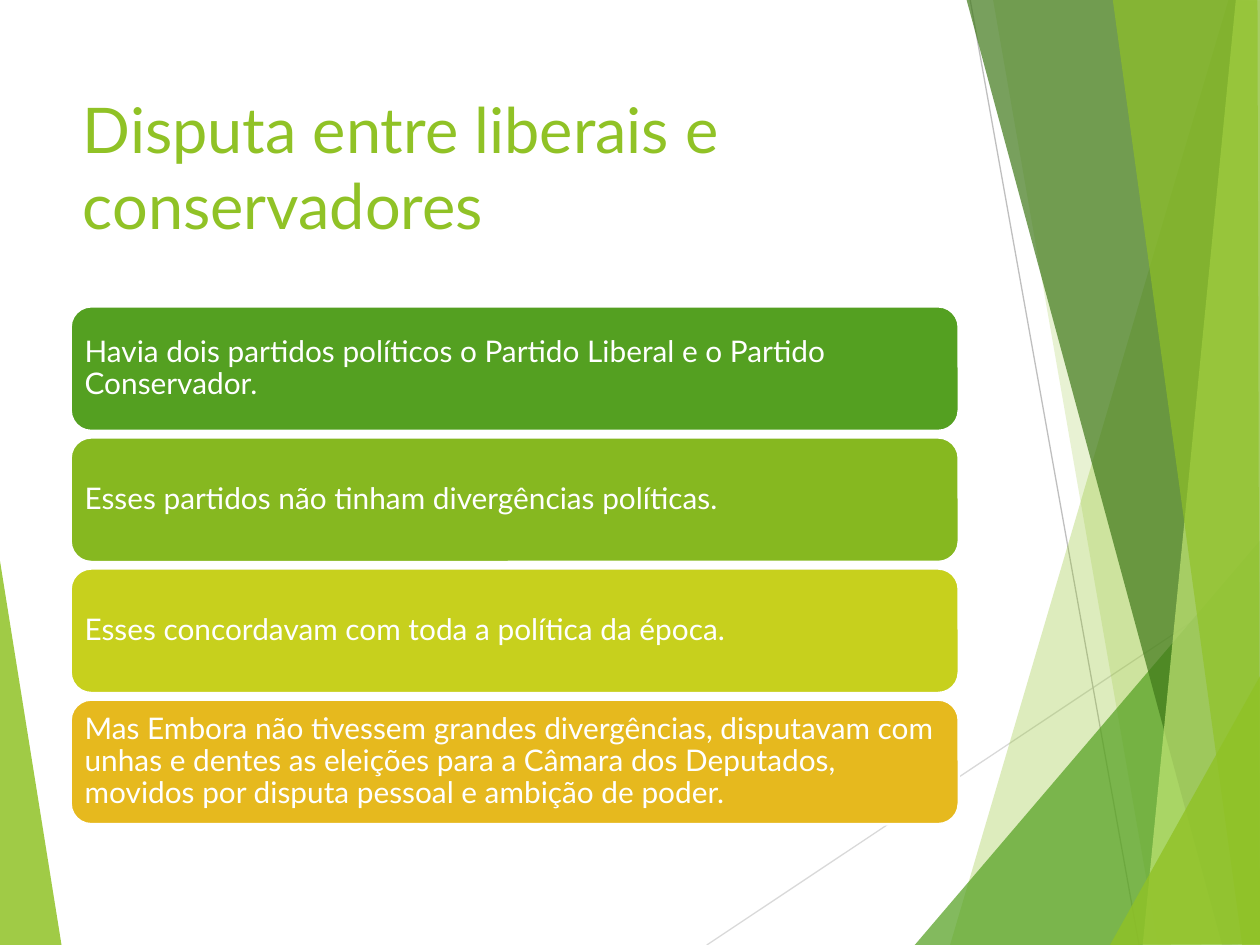
import pptx
import pptx.dml.color
import pptx.enum.shapes
import pptx.enum.text
import pptx.oxml.ns
import pptx.util
from dataclasses import dataclass
from lxml import etree

Pt = pptx.util.Pt
qn = pptx.oxml.ns.qn


@dataclass(frozen=True)
class Theme:
    font: str = "Lato"
    title_size: float = 36
    body_size: float = 17
    lime: str = "90C226"
    green: str = "54A021"
    dark_green: str = "3F7819"
    pale_lime: str = "C0E474"
    white: str = "FFFFFF"
    light_gray: str = "D9D9D9"
    gray: str = "BFBFBF"
    cards: tuple = ("54A021", "86B820", "C7D01D", "E6B91E")


THEME = Theme()

# Corner points, fill colour, opacity in percent
FACETS = [
    ([(-0.7, 316), (35.3, 540.7), (-0.7, 540)], THEME.lime, 85),
    ([(702, 0), (542.9, 540), (721.4, 540.7), (720.7, 0.7)], THEME.lime, 30),
    ([(567.4, -0.7), (661.7, 540), (720.7, 540), (720.7, -0.7)], THEME.lime, 20),
    ([(522.7, 540), (720, 308.9), (720.7, 540)], THEME.green, 72),
    ([(552.2, -0.7), (698.4, 540), (720.7, 539.3), (720.7, -0.7)], THEME.dark_green, 70),
    ([(706.3, -0.7), (653, 540), (720.7, 540), (720, -0.7)], THEME.pale_lime, 70),
    ([(635.8, -0.7), (709.9, 540), (720, 540), (718.6, -0.7)], THEME.lime, 65),
    ([(634.3, 540), (720.7, 385.2), (720.7, 539.3)], THEME.lime, 80),
]
RAYS = [
    ((403.9, 540), (720.7, 329), THEME.light_gray),
    ((554.4, 0), (650.9, 540), THEME.gray),
]

TITLE = "Disputa entre liberais e conservadores"
STATEMENTS = [
    "Havia dois partidos políticos o Partido Liberal e o Partido Conservador.",
    "Esses partidos não tinham divergências políticas.",
    "Esses concordavam com toda a política da época.",
    "Mas Embora não tivessem grandes divergências, disputavam com unhas e dentes "
    "as eleições para a Câmara dos Deputados, movidos por disputa pessoal e "
    "ambição de poder.",
]
LEFT, WIDTH = 40.3, 507.6
CARD_TOP, CARD_HEIGHT, CARD_PITCH = 175, 71.3, 74.9


def rgb(color):
    return pptx.dml.color.RGBColor.from_string(color)


def apply_format(target, values):
    for name, value in values.items():
        setattr(target, name, value)


class SlideBuilder:
    def __init__(self, slide, theme):
        self.slide = slide
        self.theme = theme

    def facet(self, points, color, opacity):
        """Draw a translucent polygon without an outline."""
        corners = [(Pt(x), Pt(y)) for x, y in points]
        builder = self.slide.shapes.build_freeform(*corners[0], scale=1.0)
        builder.add_line_segments(corners[1:], close=True)
        shape = builder.convert_to_shape()
        self.paint(shape, color)
        shape.line.fill.background()
        color_element = shape._element.spPr.find(qn("a:solidFill"))[0]
        etree.SubElement(color_element, qn("a:alpha"), val=str(opacity * 1000))

    def ray(self, start, end, color):
        connector = self.slide.shapes.add_connector(
            pptx.enum.shapes.MSO_CONNECTOR.STRAIGHT, *map(Pt, start + end))
        connector.line.color.rgb = rgb(color)
        connector.line.width = Pt(0.75)
        etree.SubElement(connector._element.spPr, qn("a:effectLst"))

    def title(self, text, left, top, width, height):
        shape = self.slide.shapes.add_textbox(*map(Pt, (left, top, width, height)))
        self.set_text(shape, text, self.theme.title_size, self.theme.lime,
                      pptx.enum.text.MSO_ANCHOR.TOP, (7.2, 3.6), 1.0)

    def card(self, text, color, left, top, width, height):
        shape = self.slide.shapes.add_shape(
            pptx.enum.shapes.MSO_SHAPE.ROUNDED_RECTANGLE,
            *map(Pt, (left, top, width, height)))
        self.paint(shape, color)
        shape.line.color.rgb = rgb(self.theme.white)
        shape.line.width = Pt(1.5)
        self.set_text(shape, text, self.theme.body_size, self.theme.white,
                      pptx.enum.text.MSO_ANCHOR.MIDDLE, (4.6, 3), 0.9)

    def paint(self, shape, color):
        shape.shadow.inherit = False
        shape.fill.solid()
        shape.fill.fore_color.rgb = rgb(color)

    def set_text(self, shape, text, size, color, anchor, insets, line_spacing):
        horizontal, vertical = map(Pt, insets)
        frame = shape.text_frame
        apply_format(frame, {
            "word_wrap": True, "vertical_anchor": anchor,
            "margin_left": horizontal, "margin_right": horizontal,
            "margin_top": vertical, "margin_bottom": vertical,
        })
        paragraph = frame.paragraphs[0]
        apply_format(paragraph, {
            "alignment": pptx.enum.text.PP_ALIGN.LEFT, "line_spacing": line_spacing,
        })
        run = paragraph.add_run()
        run.text = text
        apply_format(run.font, {"name": self.theme.font, "size": Pt(size)})
        run.font.color.rgb = rgb(color)


def main():
    presentation = pptx.Presentation()
    apply_format(presentation, {"slide_width": Pt(720), "slide_height": Pt(540)})
    slide = presentation.slides.add_slide(presentation.slide_layouts[6])
    builder = SlideBuilder(slide, THEME)

    builder.facet(*FACETS[0])
    for ray in RAYS:
        builder.ray(*ray)
    for facet in FACETS[1:]:
        builder.facet(*facet)

    builder.title(TITLE, LEFT, 48.2, WIDTH, 103.7)
    for index, (text, color) in enumerate(zip(STATEMENTS, THEME.cards)):
        builder.card(text, color, LEFT, CARD_TOP + index * CARD_PITCH, WIDTH, CARD_HEIGHT)

    presentation.save("out.pptx")


if __name__ == "__main__":
    main()
